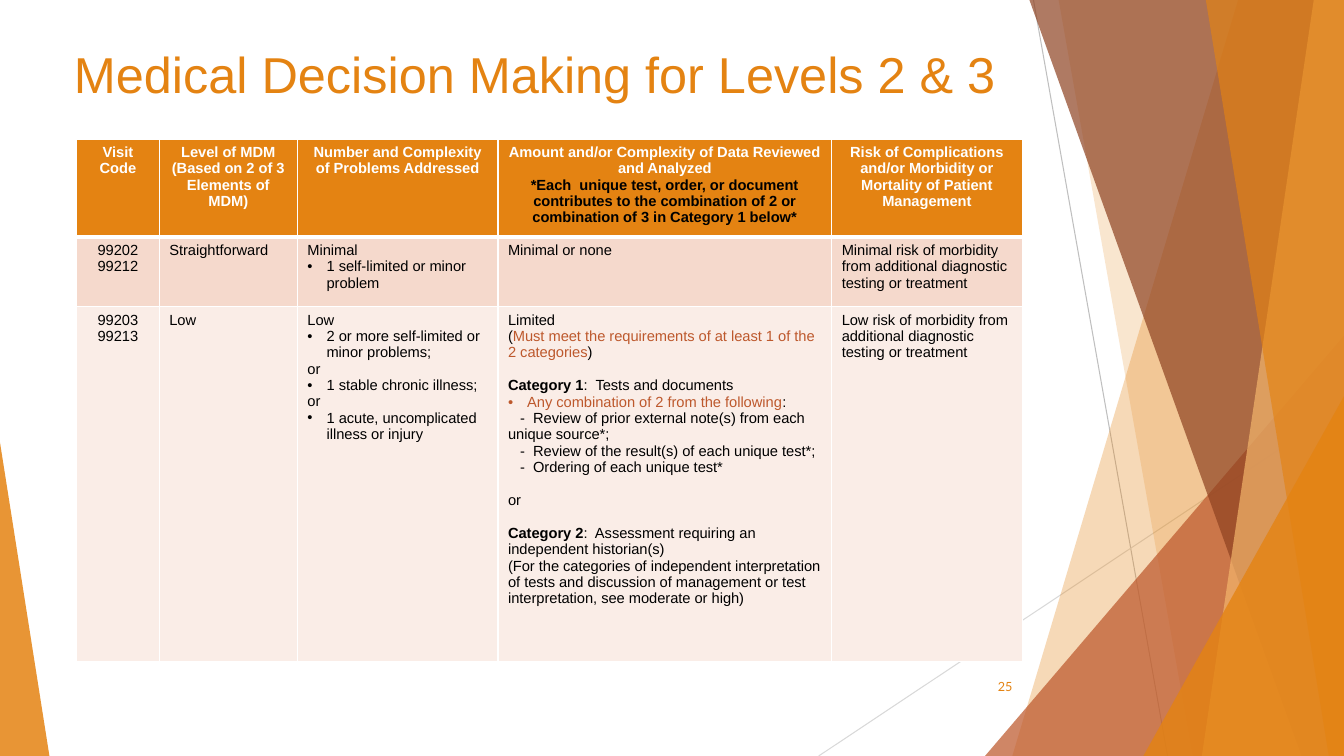
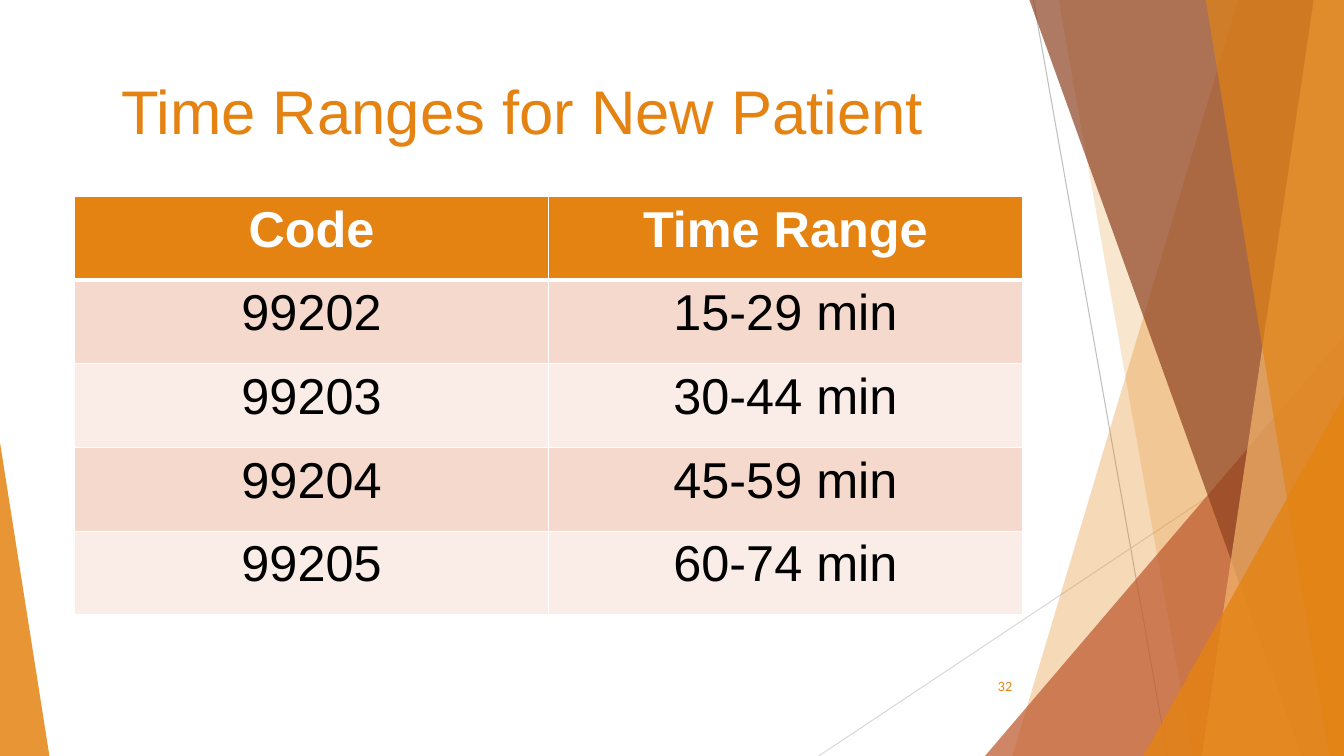
from pptx import Presentation
from pptx import util as u
from pptx.dml.color import RGBColor
from pptx.enum import shapes, text
from pptx.oxml.ns import qn
from lxml import etree

WIDTH, HEIGHT = 13.33, 7.5
ORANGE, RUST, BROWN, AMBER = "E48312", "BD582C", "8E4221", "F3B56C"
WHITE, BLACK = "FFFFFF", "000000"
STRIPES = "F5D9CC", "FAEDE7"
CENTER, LEFT, RIGHT = (text.PP_ALIGN.CENTER, text.PP_ALIGN.LEFT,
                       text.PP_ALIGN.RIGHT)


def rgb(code):
    return RGBColor.from_string(code)


def child(parent, tag, **attributes):
    return etree.SubElement(parent, qn(tag), **attributes)


def para(*spans, align=LEFT, color=BLACK, bold=False, bullet=False,
         first=0, before=0):
    """Describe a paragraph; a span is text or (text, its own format)."""
    return dict(spans=spans, align=align, color=color, bold=bold,
                bullet=bullet, first=first, before=before)


def write(frame, paras, size, font="Arial"):
    for number, spec in enumerate(paras):
        line = frame.add_paragraph() if number else frame.paragraphs[0]
        line.alignment = spec["align"]
        line.space_before = u.Pt(spec["before"])
        props = line._p.get_or_add_pPr()
        if spec["bullet"]:
            props.set("marL", str(u.Inches(0.19)))
            props.set("indent", str(u.Inches(-0.19)))
            child(props, "a:buFont", typeface="Arial")
            child(props, "a:buChar", char="•")
        elif spec["first"]:
            props.set("marL", "0")
            props.set("indent", str(u.Inches(spec["first"])))
        for span in spec["spans"]:
            words, own = (span, {}) if isinstance(span, str) else span
            run = line.add_run()
            run.text = words
            run.font.name, run.font.size = font, u.Pt(size)
            run.font.bold = own.get("bold", spec["bold"])
            run.font.color.rgb = rgb(own.get("color", spec["color"]))


def set_borders(cell, top, bottom):
    """Give a cell white borders, 1 pt at the sides."""
    props = cell._tc.get_or_add_tcPr()
    sides = ("L", 1), ("R", 1), ("T", top), ("B", bottom)
    for place, (side, width) in enumerate(sides):
        border = etree.Element(qn(f"a:ln{side}"), w=str(u.Pt(width)))
        child(child(border, "a:solidFill"), "a:srgbClr", val=WHITE)
        props.insert(place, border)


class Deck:
    def __init__(self):
        self.file = Presentation()
        self.file.slide_width = u.Inches(WIDTH)
        self.file.slide_height = u.Inches(HEIGHT)
        self.page = None

    def add_page(self, title, title_box, title_size, number):
        self.page = self.file.slides.add_slide(self.file.slide_layouts[6])
        self.decorate()
        self.text(title_box, para(title, align=CENTER, color=ORANGE),
                  title_size)
        self.text((9.39, 6.61, 0.75, 0.4),
                  para(number, align=RIGHT, color=ORANGE), 9, font="Lato",
                  anchor=text.MSO_ANCHOR.MIDDLE)

    def decorate(self):
        self.line((10.25, 0), (11.58, HEIGHT), "BFBFBF")
        self.line((WIDTH, 4.03), (8.12, HEIGHT), "D9D9D9")
        self.band(12.28, 10.04, ORANGE, 30)
        self.band(10.5, 11.83, ORANGE, 20)
        self.triangle(9.77, 3.33, 3.56, RUST, 72, apex=1)
        self.band(10.21, 12.91, BROWN, 70)
        self.band(13.03, 11.92, AMBER, 70)
        self.band(11.96, 13.18, ORANGE, 65)
        self.triangle(11.34, 3.93, 1.99, ORANGE, 80, apex=1)
        self.triangle(0, 4.39, 0.49, ORANGE, 85, apex=0)

    def line(self, start, end, color):
        line = self.page.shapes.add_connector(
            shapes.MSO_CONNECTOR.STRAIGHT,
            *(u.Inches(value) for value in start + end))
        line.line.color.rgb = rgb(color)
        line.line.width = u.Pt(0.75)
        child(line._element.spPr, "a:effectLst")

    def paint(self, shape, color, opacity):
        shape.shadow.inherit = False
        shape.line.fill.background()
        shape.fill.solid()
        shape.fill.fore_color.rgb = rgb(color)
        tint = shape._element.spPr.find(qn("a:solidFill"))[0]
        child(tint, "a:alpha", val=str(opacity * 1000))

    def band(self, top, bottom, color, opacity):
        """Fill from a slanted left edge to the right edge of the page."""
        outline = self.page.shapes.build_freeform(
            u.Inches(top), 0, scale=1.0)
        corners = (WIDTH, 0), (WIDTH, HEIGHT), (bottom, HEIGHT)
        outline.add_line_segments(
            [(u.Inches(x), u.Inches(y)) for x, y in corners], close=True)
        self.paint(outline.convert_to_shape(), color, opacity)

    def triangle(self, left, top, width, color, opacity, apex):
        """Add a triangle that stands on the bottom of the page."""
        shape = self.page.shapes.add_shape(
            shapes.MSO_SHAPE.ISOSCELES_TRIANGLE, u.Inches(left),
            u.Inches(top), u.Inches(width), u.Inches(HEIGHT - top))
        shape.adjustments[0] = apex
        self.paint(shape, color, opacity)

    def text(self, place, line, size, font="Arial",
             anchor=text.MSO_ANCHOR.TOP):
        box = self.page.shapes.add_textbox(*map(u.Inches, place))
        box.text_frame.word_wrap = True
        box.text_frame.vertical_anchor = anchor
        write(box.text_frame, [line], size, font)

    def table(self, left, top, widths, heights, rows, size):
        table = self.page.shapes.add_table(
            len(rows), len(widths), u.Inches(left), u.Inches(top),
            u.Inches(sum(widths)), u.Inches(sum(heights))).table
        table.horz_banding = False
        for column, width in zip(table.columns, widths):
            column.width = u.Inches(width)
        for index, (row, height) in enumerate(zip(rows, heights)):
            table.rows[index].height = u.Inches(height)
            for cell, paras in zip(table.rows[index].cells, row):
                cell.fill.solid()
                cell.fill.fore_color.rgb = rgb(
                    STRIPES[(index - 1) % 2] if index else ORANGE)
                set_borders(cell, top=3 if index == 1 else 1,
                            bottom=1 if index else 3)
                write(cell.text_frame, paras, size)


def heading(words, color=WHITE):
    return para(words, align=CENTER, color=color, bold=True)


def centered(*lines):
    return [para(line, align=CENTER) for line in lines]


def bullet(*spans):
    return para(*spans, bullet=True)


def dash(words):
    return para("-  " + words, first=0.12)


def category(name, words, before):
    return para((name, dict(bold=True)), ":  " + words, before=before)


def decision_page(deck):
    deck.add_page("Medical Decision Making for Levels 2 & 3",
                  (0.47, 0.38, 9.67, 1.24), 36, "25")
    gap = 12
    accent = dict(color=RUST)
    header = [[heading(words)] for words in (
        "Visit Code",
        "Level of MDM (Based on 2 of 3 Elements of MDM)",
        "Number and Complexity of Problems Addressed",
        "Amount and/or Complexity of Data Reviewed and Analyzed",
        "Risk of Complications and/or Morbidity or Mortality of Patient "
        "Management")]
    header[3].append(heading(
        "*Each  unique test, order, or document contributes to the "
        "combination of 2 or combination of 3 in Category 1 below*", BLACK))
    straightforward = [
        centered("99202", "99212"),
        [para("Straightforward")],
        [para("Minimal"), bullet("1 self-limited or minor problem")],
        [para("Minimal or none")],
        [para("Minimal risk of morbidity from additional diagnostic testing "
              "or treatment")]]
    low = [
        centered("99203", "99213"),
        [para("Low")],
        [para("Low"),
         bullet("2 or more self-limited or minor problems;"),
         para("or"),
         bullet("1 stable chronic illness;"),
         para("or"),
         bullet("1 acute, uncomplicated illness or injury")],
        [para("Limited"),
         para("(", ("Must meet the requirements of at least 1 of the "
                    "2 categories", accent), ")"),
         category("Category 1", "Tests and documents", gap),
         bullet(("Any combination of 2 from the following", accent), ":"),
         dash("Review of prior external note(s) from each unique source*;"),
         dash("Review of the result(s) of each unique test*;"),
         dash("Ordering of each unique test*"),
         para("or", before=gap),
         category("Category 2",
                  "Assessment requiring an independent historian(s)", gap),
         para("(For the categories of independent interpretation of tests "
              "and discussion of management or test interpretation, see "
              "moderate or high)")],
        [para("Low risk of morbidity from additional diagnostic testing or "
              "treatment")]]
    deck.table(0.76, 1.38, (0.82, 1.37, 1.99, 3.31, 1.89),
               (0.95, 0.69, 3.52), (header, straightforward, low), 10.5)


def time_page(deck):
    deck.add_page("Time Ranges for New Patient",
                  (0.23, 0.67, 9.91, 1.44), 44, "32")
    ranges = (("99202", "15-29 min"), ("99203", "30-44 min"),
              ("99204", "45-59 min"), ("99205", "60-74 min"))
    rows = [[[heading("Code")], [heading("Time Range")]]]
    rows += [[centered(words) for words in row] for row in ranges]
    deck.table(0.74, 1.95, [4.7] * 2, [0.83] * len(rows), rows, 36)


def main():
    deck = Deck()
    decision_page(deck)
    time_page(deck)
    deck.file.save("out.pptx")


if __name__ == "__main__":
    main()
